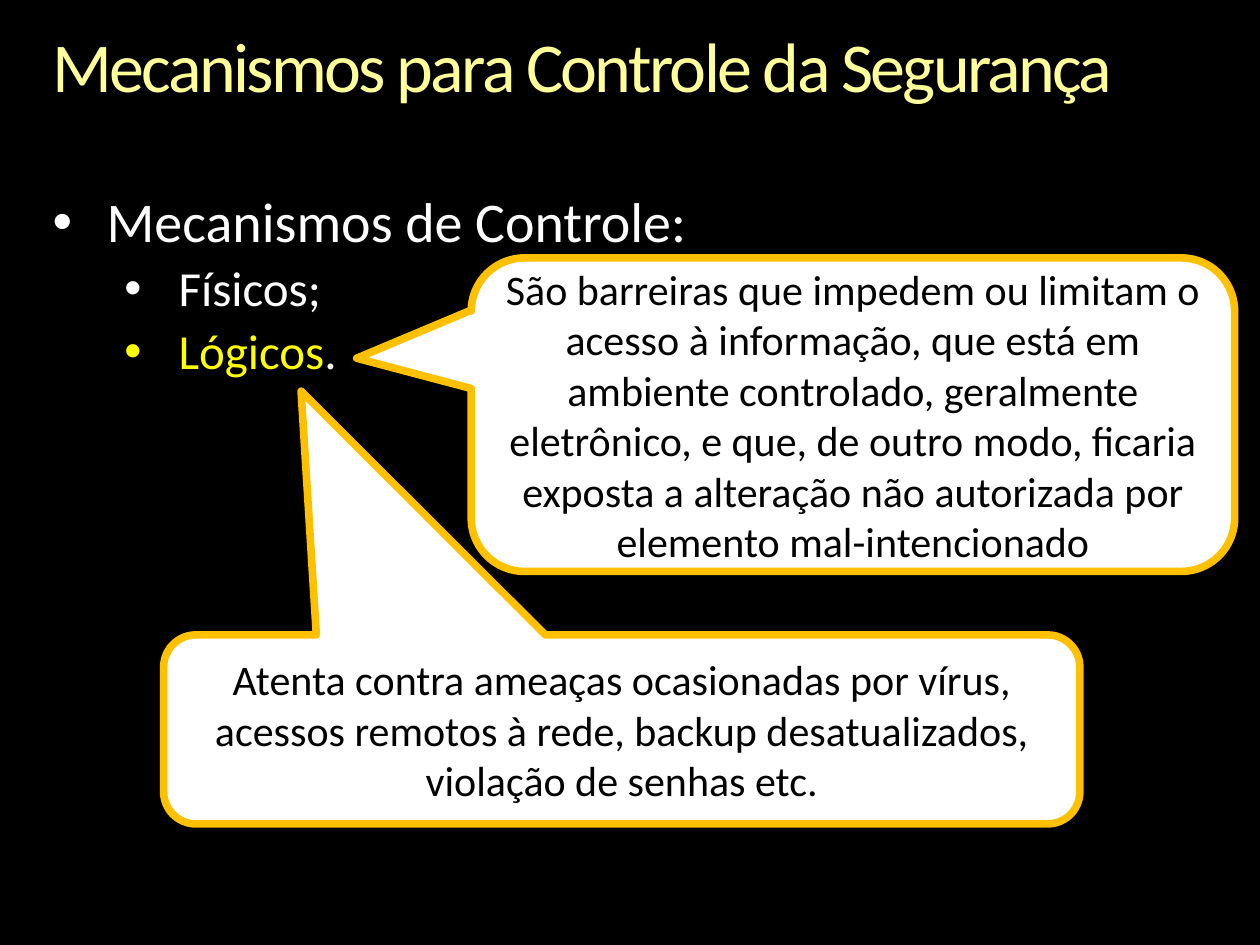
"""Build a slide on security control mechanisms with two callouts."""
from lxml import etree
from pptx import Presentation
from pptx import util as u
from pptx.dml.color import RGBColor
from pptx.enum import shapes, text
from pptx.oxml.ns import qn

FONT = "Calibri"
BLACK, WHITE, YELLOW, CREAM, AMBER = "000000", "FFFFFF", "FFFF00", "FFFF99", "FFC000"
TITLE = "Mecanismos para Controle da Segurança"
BULLETS = [
    (0, 32, 1.09, 0, [("Mecanismos de Controle:", WHITE)]),
    (1, 28, 2.54, 5.6, [("Físicos;", WHITE)]),
    (1, 28, 2.54, 5.6, [("Lógicos", YELLOW), (".", WHITE)]),
]
HANGING = 1.09
CALLOUTS = [
    ((9.5, 5.2, 15.39, 6.32), (-0.65, -0.18, 0.17),
     "São barreiras que impedem ou limitam o acesso à informação, que está em "
     "ambiente controlado, geralmente eletrônico, e que, de outro modo, ficaria "
     "exposta a alteração não autorizada por elemento mal-intencionado"),
    ((3.3, 12.8, 18.47, 3.81), (-0.35, -1.79, 0.17),
     "Atenta contra ameaças ocasionadas por vírus, acessos remotos à rede, "
     "backup desatualizados, violação de senhas etc."),
]


def color(value):
    return RGBColor.from_string(value)


def place(*lengths):
    return [u.Cm(length) for length in lengths]


def style(font, size, value):
    font.name, font.size = FONT, u.Pt(size)
    font.color.rgb = color(value)


def plain_frame(box):
    frame = box.text_frame
    frame.margin_left = frame.margin_top = frame.margin_right = frame.margin_bottom = 0
    frame.word_wrap = True
    frame.auto_size = text.MSO_AUTO_SIZE.NONE
    frame.vertical_anchor = text.MSO_ANCHOR.TOP
    return frame


def add_title(page):
    title = page.shapes.title
    title.left, title.top, title.width, title.height = place(1.06, 0.64, 23.29, 1.55)
    para = plain_frame(title).paragraphs[0]
    para.alignment, para.line_spacing = text.PP_ALIGN.LEFT, 0.9
    span = para.add_run()
    span.text = TITLE
    style(span.font, 40, CREAM)
    span.font._element.set("spc", "-150")


def add_bullets(page):
    frame = plain_frame(page.shapes.add_textbox(*place(1.06, 3.91, 23.29, 3.86)))
    for index, (level, size, indent, before, spans) in enumerate(BULLETS):
        para = frame.add_paragraph() if index else frame.paragraphs[0]
        para.level, para.line_spacing = level, 0.9
        para.space_before = u.Pt(before)
        properties = para._p.get_or_add_pPr()
        properties.set("marL", str(u.Cm(indent)))
        properties.set("indent", str(-u.Cm(HANGING)))
        etree.SubElement(properties, qn("a:buFont"), typeface="Arial")
        etree.SubElement(properties, qn("a:buChar"), char="•")
        for words, value in spans:
            span = para.add_run()
            span.text = words
            style(span.font, size, value)


def add_callout(page, bounds, adjustments, words):
    callout = page.shapes.add_shape(
        shapes.MSO_SHAPE.ROUNDED_RECTANGULAR_CALLOUT, *place(*bounds))
    for index, value in enumerate(adjustments):
        callout.adjustments[index] = value
    callout.shadow.inherit = False
    callout.fill.solid()
    callout.fill.fore_color.rgb = color(WHITE)
    callout.line.color.rgb = color(AMBER)
    callout.line.width = u.Pt(4.33)
    frame = callout.text_frame
    frame.word_wrap = True
    frame.vertical_anchor = text.MSO_ANCHOR.MIDDLE
    para = frame.paragraphs[0]
    para.text = words
    para.alignment = text.PP_ALIGN.CENTER
    style(para.font, 24, BLACK)


def main():
    deck = Presentation()
    deck.slide_width, deck.slide_height = place(25.4, 19.05)
    page = deck.slides.add_slide(deck.slide_layouts.get_by_name("Title Only"))
    page.background.fill.solid()
    page.background.fill.fore_color.rgb = color(BLACK)
    add_title(page)
    add_bullets(page)
    for callout in CALLOUTS:
        add_callout(page, *callout)
    deck.save("out.pptx")


if __name__ == "__main__":
    main()
